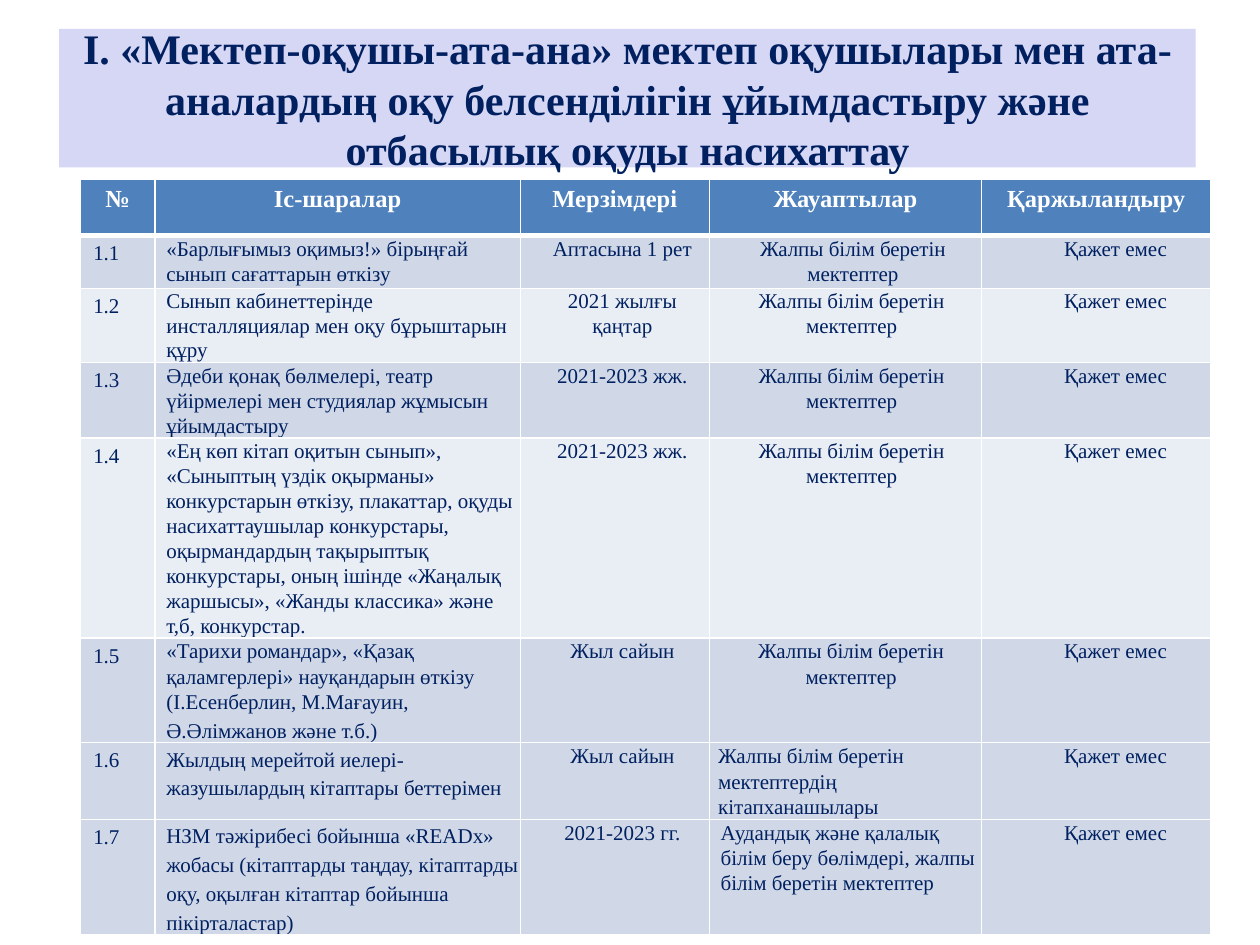
"""Build the slide with the reading-promotion action plan table."""
from dataclasses import dataclass

from lxml.etree import SubElement
from pptx import Presentation
from pptx.dml.color import RGBColor as RGB
from pptx.enum.shapes import MSO_SHAPE as Shape
from pptx.enum.text import MSO_ANCHOR as Anchor, PP_ALIGN as Align
from pptx.oxml.ns import qn
from pptx.util import Inches, Pt


@dataclass(frozen=True)
class Theme:
    font: str = "Times New Roman"
    title_size: float = 24
    header_size: float = 14
    body_size: float = 12
    navy: str = "002060"
    white: str = "FFFFFF"
    lilac: str = "D6D6F5"
    header: str = "4F81BD"
    dark_band: str = "D0D8E8"
    light_band: str = "E9EDF4"
    thin: float = 1
    thick: float = 3


@dataclass(frozen=True)
class Measure:
    activity: list
    term: str
    owner: str = "Жалпы білім беретін мектептер"
    spacing: float = 14.4
    owner_indent: float = 0.1
    owner_align: Align = Align.CENTER
    light: bool = False


WIDE = 16.5
COLUMNS = [0.59, 2.9, 1.5, 2.16, 1.82]
ROWS = [0.45, 0.42, 0.42, 0.42, 1.35, 0.42, 0.42, 0.42]
TITLE = ("І. «Мектеп-оқушы-ата-ана» мектеп оқушылары мен ата-аналардың оқу "
         "белсенділігін ұйымдастыру және отбасылық оқуды насихаттау")
HEADERS = ["№", "Іс-шаралар", "Мерзімдері", "Жауаптылар", "Қаржыландыру"]
FUNDING = "Қажет емес"
MEASURES = [
    Measure([("«Барлығымыз оқимыз!» бірыңғай сынып сағаттарын өткізу", 14.4)],
            "Аптасына 1 рет", owner_indent=0.12),
    Measure([("Сынып кабинеттерінде инсталляциялар мен оқу бұрыштарын құру", 14.1)],
            "2021 жылғы қаңтар", spacing=14.1, light=True),
    Measure([("Әдеби қонақ бөлмелері, театр үйірмелері мен студиялар жұмысын "
              "ұйымдастыру", 14.4)], "2021-2023 жж."),
    Measure([("«Ең көп кітап оқитын сынып», «Сыныптың үздік оқырманы» конкурстарын "
              "өткізу, плакаттар, оқуды насихаттаушылар конкурстары, оқырмандардың "
              "тақырыптық конкурстары, оның ішінде «Жаңалық жаршысы», «Жанды "
              "классика» және т,б, конкурстар.", 14.3)],
            "2021-2023 жж.", spacing=14.3, light=True),
    Measure([("«Тарихи романдар», «Қазақ қаламгерлері» науқандарын өткізу "
              "(I.Есенберлин, М.Мағауин,", 14.4), ("Ә.Әлімжанов және т.б.)", WIDE)],
            "Жыл сайын", owner_indent=0.09),
    Measure([("Жылдың мерейтой иелері-жазушылардың кітаптары беттерімен", WIDE)],
            "Жыл сайын", "Жалпы білім беретін мектептердің кітапханашылары",
            14.6, 0.07, Align.LEFT),
    Measure([("НЗМ тәжірибесі бойынша «READx» жобасы (кітаптарды таңдау, кітаптарды "
              "оқу, оқылған кітаптар бойынша пікірталастар)", WIDE)],
            "2021-2023 гг.", "Аудандық және қалалық білім беру бөлімдері, жалпы "
            "білім беретін мектептер", 14.4, 0.09, Align.LEFT),
]


class SlideBuilder:
    """Draws themed elements on one slide."""

    def __init__(self, slide, theme):
        self.s = slide
        self.theme = theme

    def paragraph(self, p, text, size, color, bold=False, align=Align.LEFT,
                  indent=0, spacing=None):
        """Fill one paragraph with a styled run."""
        p.alignment = align
        if indent:
            pPr = p._p.get_or_add_pPr()
            pPr.set("marL", str(Inches(indent)))
            pPr.set("indent", "0")
        if spacing:
            p.line_spacing = spacing
        r = p.add_run()
        r.text = text
        r.font.name = self.theme.font
        r.font.size = Pt(size)
        r.font.bold = bold
        r.font.color.rgb = RGB.from_string(color)

    def banner(self, text, left, top, width, height):
        """Draw the title band."""
        t = self.theme
        sp = self.s.shapes.add_shape(Shape.RECTANGLE, Inches(left), Inches(top),
                                     Inches(width), Inches(height))
        sp.shadow.inherit = False
        sp.fill.solid()
        sp.fill.fore_color.rgb = RGB.from_string(t.lilac)
        sp.line.fill.background()
        tf = sp.text_frame
        tf.word_wrap = True
        tf.vertical_anchor = Anchor.MIDDLE
        self.paragraph(tf.paragraphs[0], text, t.title_size, t.navy, True, Align.CENTER)

    def table(self, left, top, columns, rows):
        """Add an empty table with the given column widths and row heights."""
        frame = self.s.shapes.add_table(len(rows), len(columns), Inches(left), Inches(top),
                                        Inches(sum(columns)), Inches(sum(rows)))
        table = frame.table
        for column, width in zip(table.columns, columns):
            column.width = Inches(width)
        for row, height in zip(table.rows, rows):
            row.height = Inches(height)
        return table

    def cell(self, cell, fill, top=None, bottom=None, inset=True):
        """Set the borders, fill and margins of a cell."""
        t = self.theme
        tcPr = cell._tc.get_or_add_tcPr()
        widths = {"L": t.thin, "R": t.thin, "T": top or t.thin, "B": bottom or t.thin}
        for side, width in widths.items():
            ln = SubElement(tcPr, qn(f"a:ln{side}"), w=str(Pt(width)))
            solid = SubElement(ln, qn("a:solidFill"))
            SubElement(solid, qn("a:srgbClr"), val=t.white)
        cell.fill.solid()
        cell.fill.fore_color.rgb = RGB.from_string(fill)
        cell.margin_left = cell.margin_right = Inches(0.1 if inset else 0)
        cell.margin_top = cell.margin_bottom = Inches(0.05 if inset else 0)

    def header_row(self, table, labels):
        """Fill the header row."""
        t = self.theme
        for col, label in enumerate(labels):
            cell = table.cell(0, col)
            self.cell(cell, t.header, bottom=t.thick)
            self.paragraph(cell.text_frame.paragraphs[0], label, t.header_size,
                           t.white, True, Align.CENTER, spacing=1.02)

    def measure_row(self, table, row, m):
        """Fill one row with a numbered measure."""
        t = self.theme
        line = Pt(m.spacing)
        contents = [
            [(f"1.{row}", Align.LEFT, 0, None)],
            [(text, Align.LEFT, 0.09, Pt(gap)) for text, gap in m.activity],
            [(m.term, Align.CENTER, 0.12, line)],
            [(m.owner, m.owner_align, m.owner_indent, line)],
            [(FUNDING, Align.CENTER, 0.31, line)],
        ]
        for col, paragraphs in enumerate(contents):
            cell = table.cell(row, col)
            self.cell(cell, t.light_band if m.light else t.dark_band,
                      top=t.thick if row == 1 else t.thin, inset=col == 0)
            tf = cell.text_frame
            for i, (text, align, indent, spacing) in enumerate(paragraphs):
                p = tf.add_paragraph() if i else tf.paragraphs[0]
                self.paragraph(p, text, t.body_size, t.navy, align=align,
                               indent=indent, spacing=spacing)


def main():
    """Build and save the presentation."""
    prs = Presentation()
    prs.slide_width, prs.slide_height = Inches(10), Inches(7.5)
    builder = SlideBuilder(prs.slides.add_slide(prs.slide_layouts[6]), Theme())
    builder.banner(TITLE, 0.47, 0.23, 9.02, 1.1)
    table = builder.table(0.64, 1.42, COLUMNS, ROWS)
    builder.header_row(table, HEADERS)
    for row, measure in enumerate(MEASURES, 1):
        builder.measure_row(table, row, measure)
    prs.save("out.pptx")


if __name__ == "__main__":
    main()
